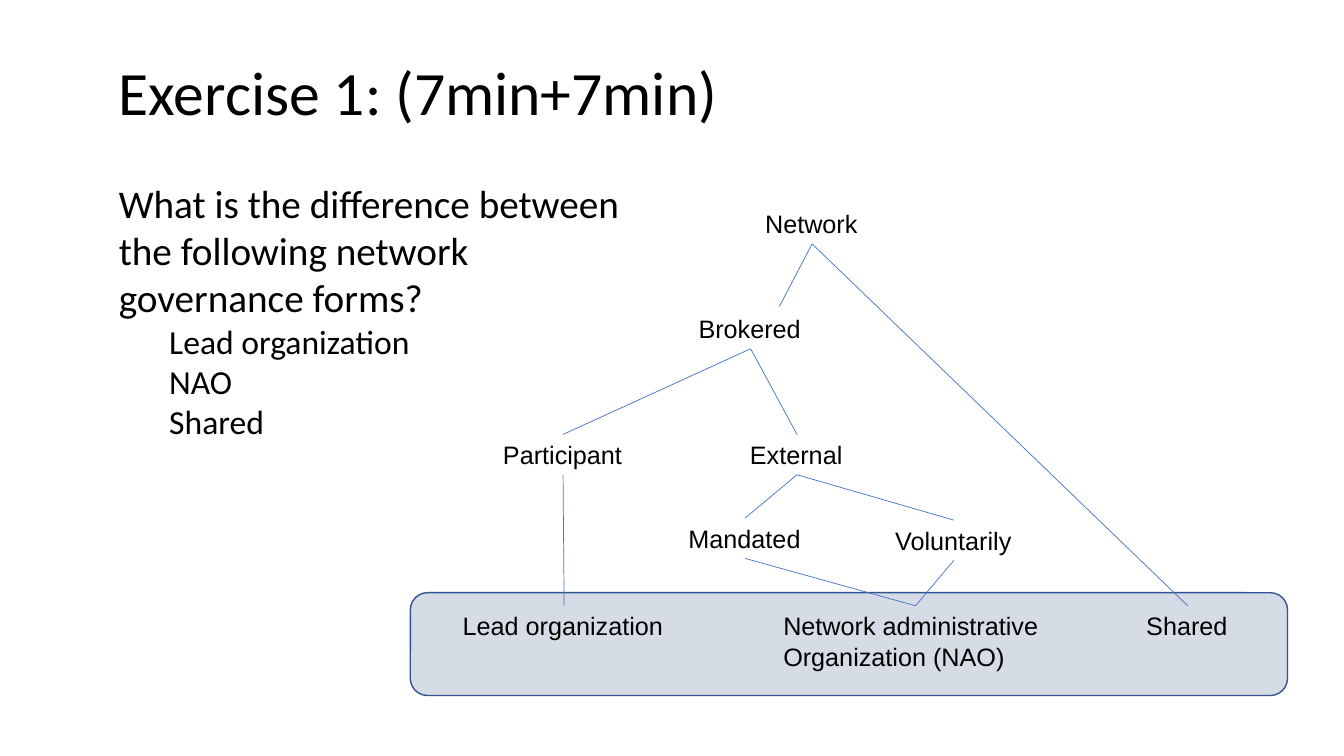
from lxml.etree import SubElement
from pptx import Presentation
from pptx.dml.color import RGBColor
from pptx.enum.shapes import MSO_CONNECTOR, MSO_SHAPE
from pptx.enum.text import MSO_ANCHOR, MSO_AUTO_SIZE, PP_ALIGN
from pptx.oxml.ns import qn
from pptx.util import Pt

EMU_PER_PX = 9144  # 100 px to the inch
BLACK = RGBColor(0x00, 0x00, 0x00)
LINE_BLUE = RGBColor(0x44, 0x72, 0xC4)
PANEL_FILL = RGBColor(0xD6, 0xDC, 0xE5)
PANEL_LINE = RGBColor(0x32, 0x54, 0x91)
TOP, BOTTOM = 0, 2

# name: (left, top, width, height, text)
NODES = {
    "network": (749, 202, 113, 40, "Network"),
    "brokered": (683, 306, 123, 40, "Brokered"),
    "participant": (489, 431, 139, 40, "Participant"),
    "external": (734, 431, 113, 40, "External"),
    "mandated": (673, 514, 132, 40, "Mandated"),
    "voluntarily": (878, 516, 136, 40, "Voluntarily"),
    "lead": (449, 601, 221, 40, "Lead organization"),
    "nao": (767, 601, 282, 71, "Network administrative\nOrganization (NAO)"),
    "shared": (1127, 601, 102, 40, "Shared"),
}
BRANCHES = [
    ("network", "shared"),
    ("brokered", "participant"),
    ("brokered", "external"),
    ("external", "mandated"),
    ("external", "voluntarily"),
    ("participant", "lead"),
    ("mandated", "nao"),
    ("voluntarily", "nao"),
]


def px(*lengths):
    return [length * EMU_PER_PX for length in lengths]


def write(paragraph, text, font="Calibri", size=18, color=BLACK, spacing=None, indent=0):
    """Fill a paragraph; a vertical tab in the text becomes a line break."""
    if indent:
        paragraph.level = 1
        properties = paragraph._p.get_or_add_pPr()
        properties.set("marL", str(indent * EMU_PER_PX))
        properties.set("indent", "0")
    paragraph.text = text
    paragraph.alignment = PP_ALIGN.LEFT
    paragraph.line_spacing = spacing
    for run in paragraph.runs:
        run.font.name = font
        run.font.size = Pt(size)
        run.font.color.rgb = color


class SlideBuilder:
    def __init__(self, slide):
        self.slide = slide

    def panel(self, *box):
        shape = self.slide.shapes.add_shape(MSO_SHAPE.ROUNDED_RECTANGLE, *px(*box))
        shape.shadow.inherit = False
        shape.fill.solid()
        shape.fill.fore_color.rgb = PANEL_FILL
        shape.line.color.rgb = PANEL_LINE
        shape.line.width = Pt(1)

    def text_box(self, box, paragraphs, wrap=True, grow=True):
        """Add a text box; paragraphs are pairs of text and format."""
        shape = self.slide.shapes.add_textbox(*px(*box))
        frame = shape.text_frame
        frame.word_wrap = wrap
        frame.auto_size = MSO_AUTO_SIZE.SHAPE_TO_FIT_TEXT if grow else MSO_AUTO_SIZE.NONE
        frame.vertical_anchor = MSO_ANCHOR.TOP
        for index, (text, style) in enumerate(paragraphs):
            paragraph = frame.add_paragraph() if index else frame.paragraphs[0]
            write(paragraph, text, **style)
        return shape

    def node(self, left, top, width, height, text):
        lines = [(line, {"font": "Arial"}) for line in text.split("\n")]
        return self.text_box((left, top, width, height), lines, wrap=False)

    def branch(self, parent, child=None, end=(0, 0)):
        """Draw a line from under the parent to the top of the child, or to a free end."""
        connector = self.slide.shapes.add_connector(MSO_CONNECTOR.STRAIGHT, 0, 0, *px(*end))
        connector.begin_connect(parent, BOTTOM)
        if child is not None:
            connector.end_connect(child, TOP)
        connector.line.color.rgb = LINE_BLUE
        connector.line.width = Pt(0.5)
        SubElement(connector._element.spPr, qn("a:effectLst"))


def main():
    presentation = Presentation()
    presentation.slide_width, presentation.slide_height = px(1333, 750)
    builder = SlideBuilder(presentation.slides.add_slide(presentation.slide_layouts[6]))

    builder.panel(407, 588, 870, 102)
    nodes = {name: builder.node(*values) for name, values in NODES.items()}
    builder.branch(nodes["network"], end=(773, 304))
    for parent, child in BRANCHES:
        builder.branch(nodes[parent], nodes[child])

    title = ("Exercise 1: (7min+7min)", {"size": 44, "spacing": 0.9})
    builder.text_box((108, 57, 1150, 145), [title], grow=False)
    question = "What is the difference between the following network governance forms?"
    forms = "Lead organization\vNAO\vShared"
    builder.text_box(
        (108, 173, 542, 273),
        [(question, {"size": 28}), (forms, {"size": 24, "indent": 50})],
    )
    presentation.save("out.pptx")


if __name__ == "__main__":
    main()
